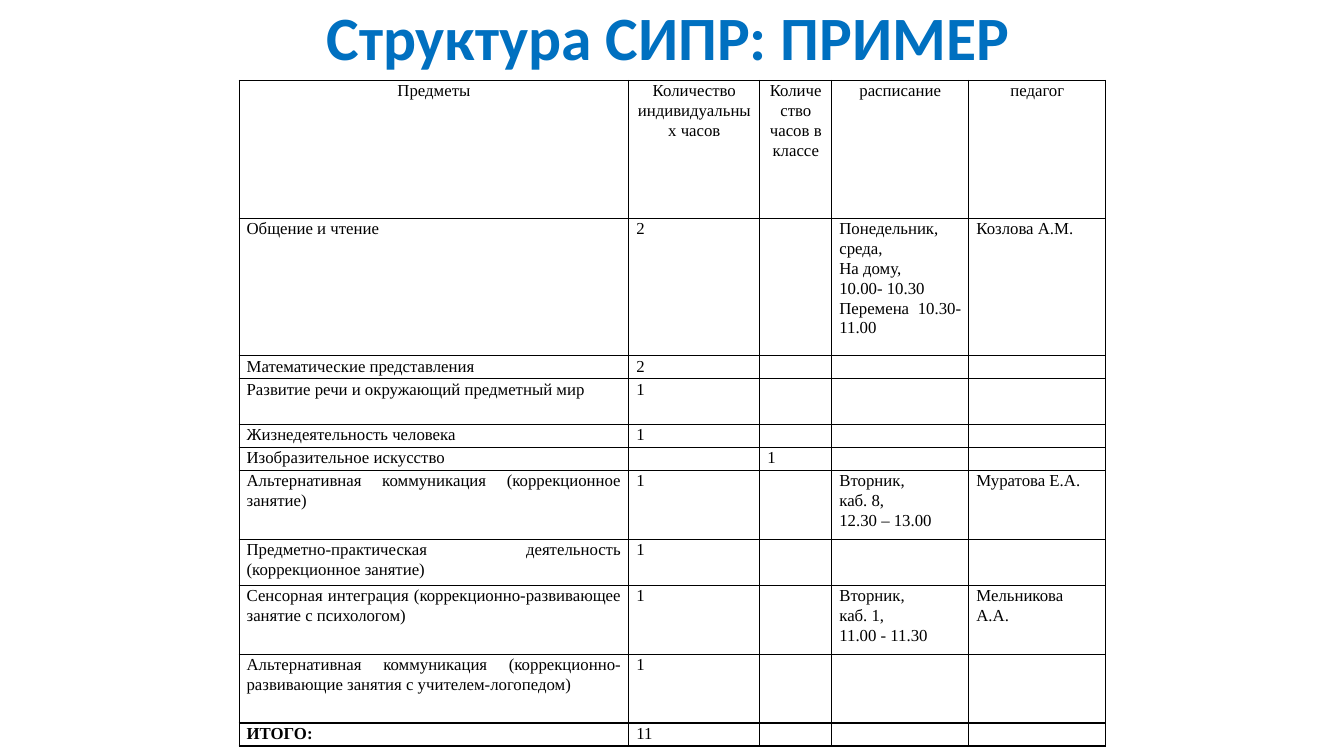
import lxml.etree
import pptx
import pptx.dml.color
import pptx.enum.text
import pptx.oxml.ns
import pptx.util

Pt = pptx.util.Pt
Align = pptx.enum.text.PP_ALIGN
Anchor = pptx.enum.text.MSO_ANCHOR
BLUE = pptx.dml.color.RGBColor(0x00, 0x70, 0xC0)
BLACK = pptx.dml.color.RGBColor(0x00, 0x00, 0x00)

COLUMN_WIDTHS = [278.4, 93.6, 51.4, 97.9, 97.9]
LINE_HEIGHT = 16.4
HEADINGS = ["Предметы", "Количество индивидуальных часов", "Количество часов в классе",
            "расписание", "педагог"]
SUBJECTS = [
    (6, "Общение и чтение", "2", "",
     "Понедельник, среда,\nНа дому,\n10.00- 10.30\nПеремена 10.30-11.00", "Козлова А.М."),
    (1, "Математические представления", "2", "", "", ""),
    (2, "Развитие речи и окружающий предметный мир", "1", "", "", ""),
    (1, "Жизнедеятельность человека", "1", "", "", ""),
    (1, "Изобразительное искусство", "", "1", "", ""),
    (3, "Альтернативная коммуникация (коррекционное занятие)", "1", "",
     "Вторник,\nкаб. 8,\n12.30 – 13.00", "Муратова Е.А."),
    (2, "Предметно-практическая деятельность (коррекционное занятие)", "1", "", "", ""),
    (3, "Сенсорная интеграция (коррекционно-развивающее занятие с психологом)", "1", "",
     "Вторник,\nкаб. 1,\n11.00 - 11.30", "Мельникова А.А."),
    (3, "Альтернативная коммуникация (коррекционно-развивающие занятия с учителем-логопедом)",
     "1", "", "", ""),
    (1, "ИТОГО:", "11", "", "", ""),
]


class CurriculumSlide:
    """Holds the text style and the slide, and adds its title and table."""

    title_font = "Calibri"
    table_font = "Times New Roman"

    def __init__(self, presentation):
        self.slide = presentation.slides.add_slide(presentation.slide_layouts[5])

    def style(self, paragraph, name, size, color, align, spacing, bold=False):
        paragraph.alignment = align
        paragraph.line_spacing = spacing
        paragraph.font.name = name
        paragraph.font.size = Pt(size)
        paragraph.font.bold = bold
        paragraph.font.color.rgb = color

    def title(self, text, left, top, width, height):
        heading = self.slide.shapes.title
        heading.left, heading.top = Pt(left), Pt(top)
        heading.width, heading.height = Pt(width), Pt(height)
        frame = heading.text_frame
        frame.text = text
        frame.word_wrap = True
        frame.auto_size = pptx.enum.text.MSO_AUTO_SIZE.NONE
        frame.vertical_anchor = Anchor.MIDDLE
        self.style(frame.paragraphs[0], self.title_font, 44, BLUE, Align.CENTER, 0.9, True)

    def borders(self, cell):
        properties = cell._tc.get_or_add_tcPr()
        for position, side in enumerate(("lnL", "lnR", "lnT", "lnB")):
            line = lxml.etree.Element(pptx.oxml.ns.qn(f"a:{side}"), w=str(Pt(1)))
            fill = lxml.etree.SubElement(line, pptx.oxml.ns.qn("a:solidFill"))
            lxml.etree.SubElement(fill, pptx.oxml.ns.qn("a:srgbClr"), val=str(BLACK))
            properties.insert(position, line)

    def cell(self, cell, text, align, bold):
        cell.text = text
        cell.margin_left = cell.margin_right = Pt(5.4)
        cell.margin_top = cell.margin_bottom = Pt(0)
        cell.vertical_anchor = Anchor.TOP
        cell.fill.background()
        self.borders(cell)
        for paragraph in cell.text_frame.paragraphs:
            self.style(paragraph, self.table_font, 12, BLACK, align, 1.07, bold)

    def table(self, rows, left, top):
        line_counts = [row[0] for row in rows]
        table = self.slide.shapes.add_table(
            len(rows), len(COLUMN_WIDTHS), Pt(left), Pt(top),
            Pt(sum(COLUMN_WIDTHS)), Pt(sum(line_counts) * LINE_HEIGHT)).table
        table.first_row = table.horz_banding = False
        for column, width in zip(table.columns, COLUMN_WIDTHS):
            column.width = Pt(width)
        for index, (lines, *texts) in enumerate(rows):
            table.rows[index].height = Pt(lines * LINE_HEIGHT)
            align = Align.JUSTIFY if index else Align.CENTER
            for column, text in enumerate(texts):
                self.cell(table.cell(index, column), text, align, text == "ИТОГО:")


def main():
    presentation = pptx.Presentation()
    presentation.slide_width, presentation.slide_height = Pt(960), Pt(540)
    curriculum = CurriculumSlide(presentation)
    curriculum.title("Структура СИПР: ПРИМЕР ", 23.8, 0, 917.3, 57.6)
    curriculum.table([(6, *HEADINGS), *SUBJECTS], 170.8, 57.4)
    presentation.save("out.pptx")


if __name__ == "__main__":
    main()
